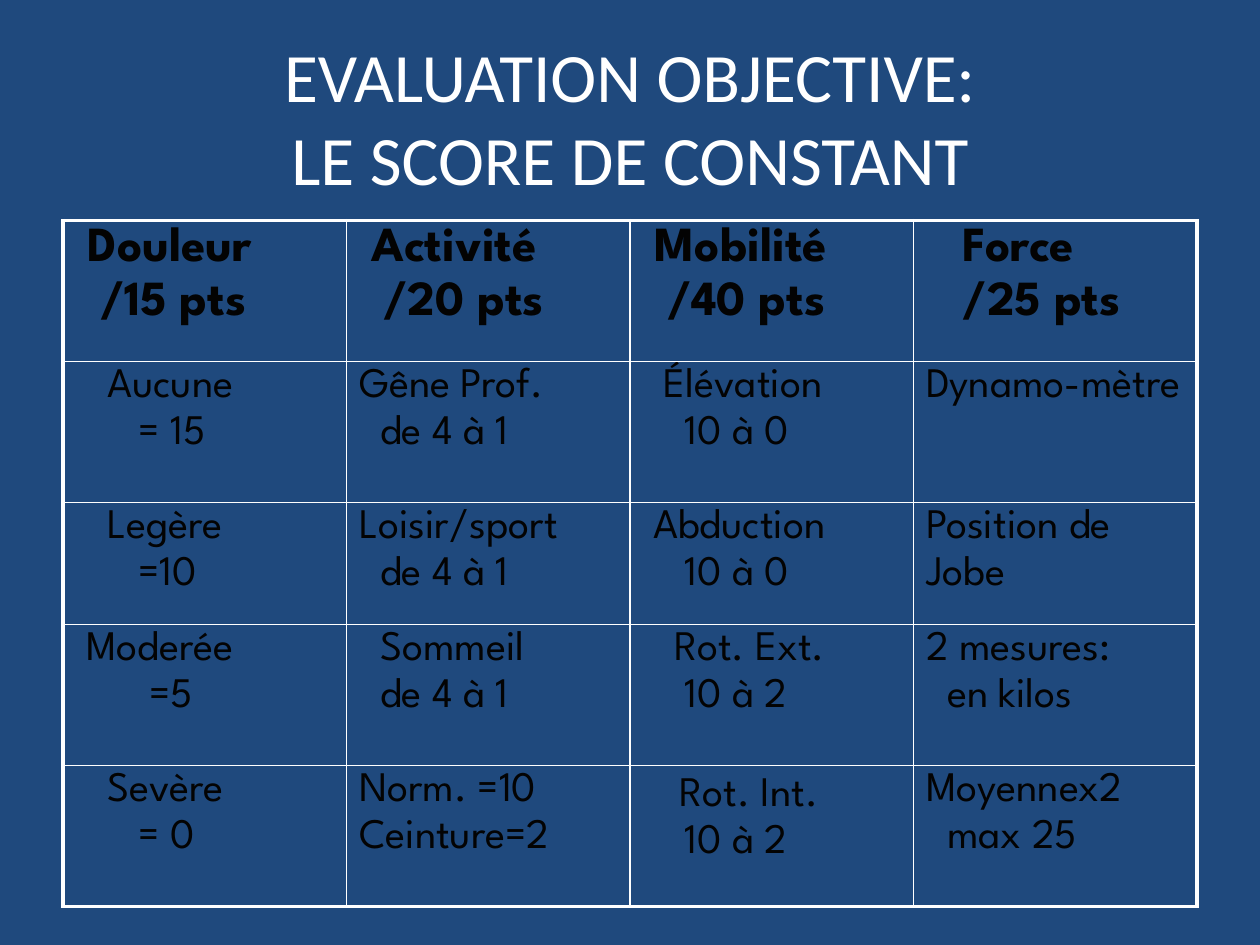
from lxml.etree import SubElement
from pptx import Presentation
from pptx.dml.color import RGBColor
from pptx.enum.text import MSO_ANCHOR, PP_ALIGN
from pptx.oxml.ns import qn
from pptx.util import Pt

WHITE, NAVY, INK = "FFFFFF", "1F497D", "030303"
TITLE_LINES = ["EVALUATION OBJECTIVE:", "LE SCORE DE CONSTANT"]
ROW_HEIGHTS = [80.64, 80.64, 69.12, 80.64, 80.64]
COLUMN_WIDTH = 162
HEADER_SIZE, BODY_SIZE = 28, 24
INDENT_STEP = 0.25  # share of the text size

# Each cell is a list of lines: (indent steps, text)
SCORE_ROWS = [
    [[(1, "Douleur"), (2, "/15 pts")], [(1, "Activité"), (2, "/20 pts")],
     [(1, "Mobilité"), (2, "/40 pts")], [(3, "Force"), (3, "/25 pts")]],
    [[(3, "Aucune"), (6, "= 15")], [(0, "Gêne Prof."), (2, "de 4 à 1")],
     [(2, "Élévation"), (4, "10 à 0")], [(0, "Dynamo-mètre")]],
    [[(3, "Legère"), (6, "=10")], [(0, "Loisir/sport"), (2, "de 4 à 1")],
     [(1, "Abduction"), (4, "10 à 0")], [(0, "Position de"), (0, "Jobe")]],
    [[(1, "Moderée"), (7, "=5")], [(2, "Sommeil"), (2, "de 4 à 1")],
     [(3, "Rot. Ext."), (4, "10 à 2")], [(0, "2 mesures:"), (2, "en kilos")]],
    [[(3, "Sevère"), (6, "= 0")], [(0, "Norm. =10"), (0, "Ceinture=2")],
     [(3.5, "Rot. Int."), (4, "10 à 2")], [(0, "Moyennex2"), (2, "max 25")]],
]


def colour(hex_string):
    return RGBColor.from_string(hex_string)


def add_span(para, text, font, size, hex_string, bold=False):
    span = para.add_run()
    span.text = text
    span.font.name = font
    span.font.size = Pt(size)
    span.font.bold = bold
    span.font.color.rgb = colour(hex_string)


def add_title(page):
    box = page.shapes.add_textbox(Pt(36), Pt(21.6), Pt(648), Pt(90))
    frame = box.text_frame
    frame.word_wrap = True
    frame.vertical_anchor = MSO_ANCHOR.MIDDLE
    para = frame.paragraphs[0]
    para.alignment = PP_ALIGN.CENTER
    for index, line in enumerate(TITLE_LINES):
        if index:
            para.add_line_break()
        add_span(para, line, "Calibri", 39.6, WHITE)


def set_borders(cell, widths):
    properties = cell._tc.get_or_add_tcPr()
    for position, (side, width) in enumerate(widths.items()):
        line = SubElement(properties, qn(f"a:ln{side}"), w=str(Pt(width)))
        fill = SubElement(line, qn("a:solidFill"))
        SubElement(fill, qn("a:srgbClr"), val=WHITE)
        properties.insert(position, line)


def fill_cell(cell, lines, size, bold):
    cell.margin_left = cell.margin_right = Pt(7.2)
    cell.margin_top = cell.margin_bottom = Pt(3.6)
    cell.fill.background()
    frame = cell.text_frame
    for index, (steps, text) in enumerate(lines):
        para = frame.add_paragraph() if index else frame.paragraphs[0]
        if index:
            para.space_before = Pt(size * 0.2)
        properties = para._p.get_or_add_pPr()
        properties.set("marL", str(Pt(steps * size * INDENT_STEP)))
        properties.set("indent", "0")
        add_span(para, text, "League Spartan", size, INK, bold)


def add_score_table(page):
    last_row, last_column = len(SCORE_ROWS) - 1, len(SCORE_ROWS[0]) - 1
    table = page.shapes.add_table(
        last_row + 1, last_column + 1, Pt(36), Pt(126),
        Pt(COLUMN_WIDTH * (last_column + 1)), Pt(sum(ROW_HEIGHTS))).table
    table.first_row = table.horz_banding = False
    for column in table.columns:
        column.width = Pt(COLUMN_WIDTH)
    for r, (row, height) in enumerate(zip(SCORE_ROWS, ROW_HEIGHTS)):
        table.rows[r].height = Pt(height)
        for c, lines in enumerate(row):
            cell = table.cell(r, c)
            fill_cell(cell, lines, BODY_SIZE if r else HEADER_SIZE, r == 0)
            # Thick outer frame, thin inner grid
            outer = {"L": c == 0, "R": c == last_column,
                     "T": r == 0, "B": r == last_row}
            set_borders(cell, {side: 2.25 if edge else 1
                               for side, edge in outer.items()})
    # The last mobility cell sits slightly lower than its neighbours
    table.cell(last_row, 2).margin_top = Pt(6.8)


def main():
    deck = Presentation()
    deck.slide_width, deck.slide_height = Pt(720), Pt(540)
    page = deck.slides.add_slide(deck.slide_layouts[6])
    page.background.fill.solid()
    page.background.fill.fore_color.rgb = colour(NAVY)
    add_title(page)
    add_score_table(page)
    deck.save("out.pptx")


if __name__ == "__main__":
    main()
